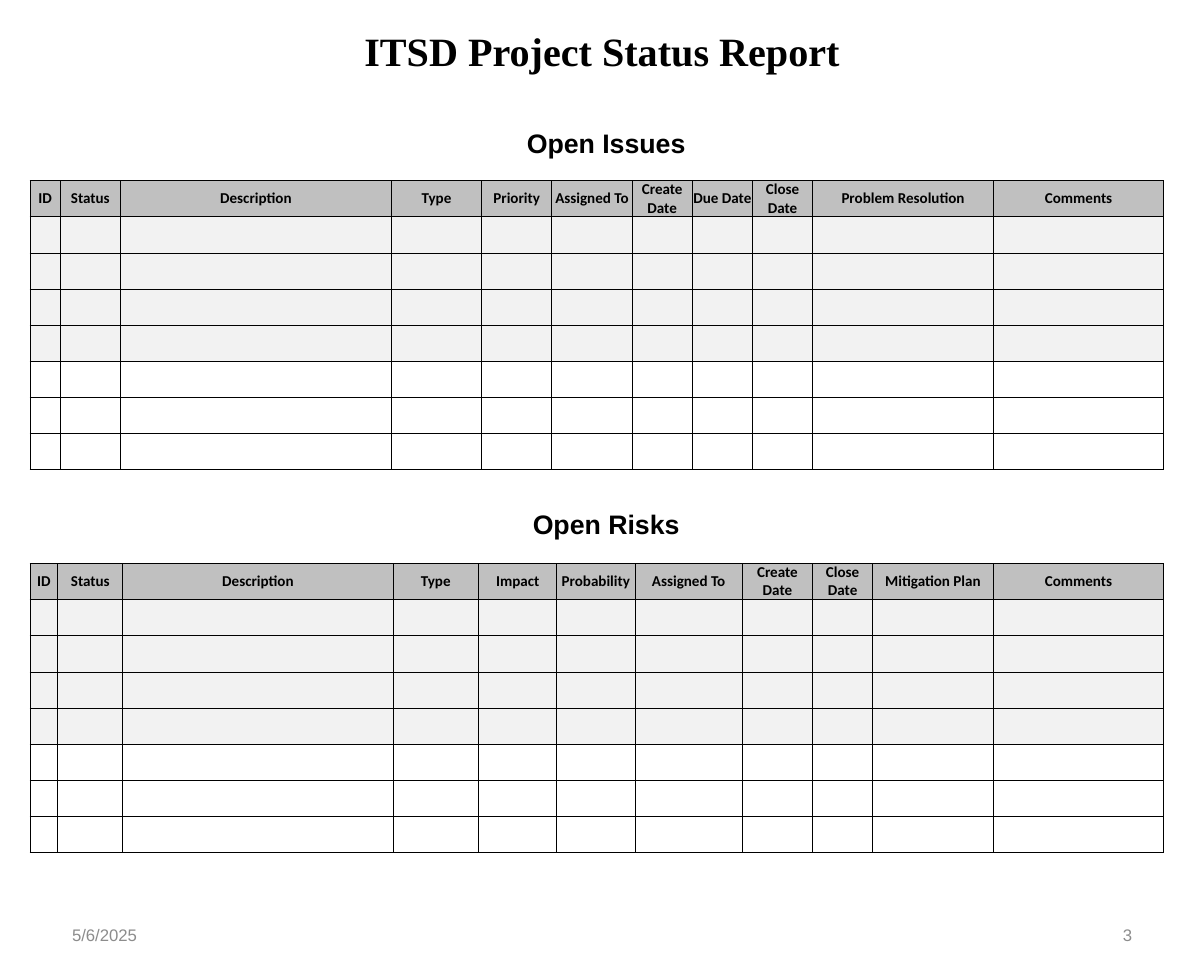
from lxml import etree
from pptx import Presentation
from pptx.dml.color import RGBColor
from pptx.enum.text import MSO_ANCHOR, PP_ALIGN
from pptx.oxml.ns import qn
from pptx.util import Pt

LEFT, CENTER, RIGHT = PP_ALIGN.LEFT, PP_ALIGN.CENTER, PP_ALIGN.RIGHT
TOP, MIDDLE = MSO_ANCHOR.TOP, MSO_ANCHOR.MIDDLE

COLORS = {"text": "000000", "footer": "8C8C8C", "header": "C0C0C0",
          "shaded": "F2F2F2", "border": "000000"}

# Content: text, box (left, top, width, height), font, size, bold, color, align, anchor
TEXTS = [
    ("ITSD Project Status Report", (102, 12, 516, 37), "Times New Roman", 24, True, "text", CENTER, TOP),
    ("Open Issues", (184.5, 72, 356, 26.5), "Arial", 16, True, "text", CENTER, TOP),
    ("Open Risks", (184.5, 300, 356, 26.5), "Arial", 16, True, "text", CENTER, TOP),
    ("5/6/2025", (36, 545, 168, 31), "Arial", 10, False, "footer", LEFT, MIDDLE),
    ("3", (516, 545, 168, 31), "Arial", 10, False, "footer", RIGHT, MIDDLE),
]

# Tables: top, then (heading, column width)
TABLES = [
    (108, [("ID", 18), ("Status", 36), ("Description", 162), ("Type", 54),
           ("Priority", 42), ("Assigned To", 48), ("Create Date", 36),
           ("Due Date", 36), ("Close Date", 36), ("Problem Resolution", 108),
           ("Comments", 102)]),
    (337, [("ID", 16.5), ("Status", 39), ("Description", 161.5), ("Type", 51.25),
           ("Impact", 46.75), ("Probability", 46.75), ("Assigned To", 64.25),
           ("Create Date", 42), ("Close Date", 36), ("Mitigation Plan", 72),
           ("Comments", 102)]),
]
TABLE_LEFT, ROW_HEIGHT = 18, 21.6
ROW_FILLS = ["header"] + ["shaded"] * 4 + [None] * 3


def set_font(paragraph, name, size, bold, color):
    font = paragraph.font
    font.name, font.size, font.bold = name, Pt(size), bold
    font.color.rgb = RGBColor.from_string(COLORS[color])


def add_text(slide, text, box, name, size, bold, color, align, anchor):
    frame = slide.shapes.add_textbox(*map(Pt, box)).text_frame
    frame.word_wrap = True
    frame.vertical_anchor = anchor
    paragraph = frame.paragraphs[0]
    paragraph.text = text
    paragraph.alignment = align
    if color == "footer":
        paragraph.line_spacing = 0.8
    set_font(paragraph, name, size, bold, color)


def add_borders(cell):
    properties = cell._tc.get_or_add_tcPr()
    for position, side in enumerate(("lnL", "lnR", "lnT", "lnB")):
        line = etree.Element(qn(f"a:{side}"), w=str(Pt(0.5)))
        fill = etree.SubElement(line, qn("a:solidFill"))
        etree.SubElement(fill, qn("a:srgbClr"), val=COLORS["border"])
        properties.insert(position, line)


def style_cell(cell, text, fill):
    cell.margin_left = cell.margin_right = cell.margin_top = cell.margin_bottom = 0
    cell.vertical_anchor = MIDDLE
    if fill:
        cell.fill.solid()
        cell.fill.fore_color.rgb = RGBColor.from_string(COLORS[fill])
    else:
        cell.fill.background()
    add_borders(cell)
    paragraph = cell.text_frame.paragraphs[0]
    if text:
        paragraph.text = text
    paragraph.alignment = CENTER
    set_font(paragraph, "Calibri", 9, True, "text")


def add_log_table(slide, top, columns):
    width = sum(column_width for _, column_width in columns)
    table = slide.shapes.add_table(
        len(ROW_FILLS), len(columns), Pt(TABLE_LEFT), Pt(top),
        Pt(width), Pt(ROW_HEIGHT * len(ROW_FILLS))).table
    table.first_row = table.horz_banding = False
    for column, (_, column_width) in zip(table.columns, columns):
        column.width = Pt(column_width)
    for row_index, fill in enumerate(ROW_FILLS):
        table.rows[row_index].height = Pt(ROW_HEIGHT)
        for column_index, (heading, _) in enumerate(columns):
            text = heading if row_index == 0 else ""
            style_cell(table.cell(row_index, column_index), text, fill)


def main():
    presentation = Presentation()
    presentation.slide_width, presentation.slide_height = Pt(720), Pt(576)
    slide = presentation.slides.add_slide(presentation.slide_layouts[6])

    # Title, section headings and footer
    for text in TEXTS:
        add_text(slide, *text)

    # Issue and risk logs
    for top, columns in TABLES:
        add_log_table(slide, top, columns)

    presentation.save("out.pptx")


if __name__ == "__main__":
    main()
